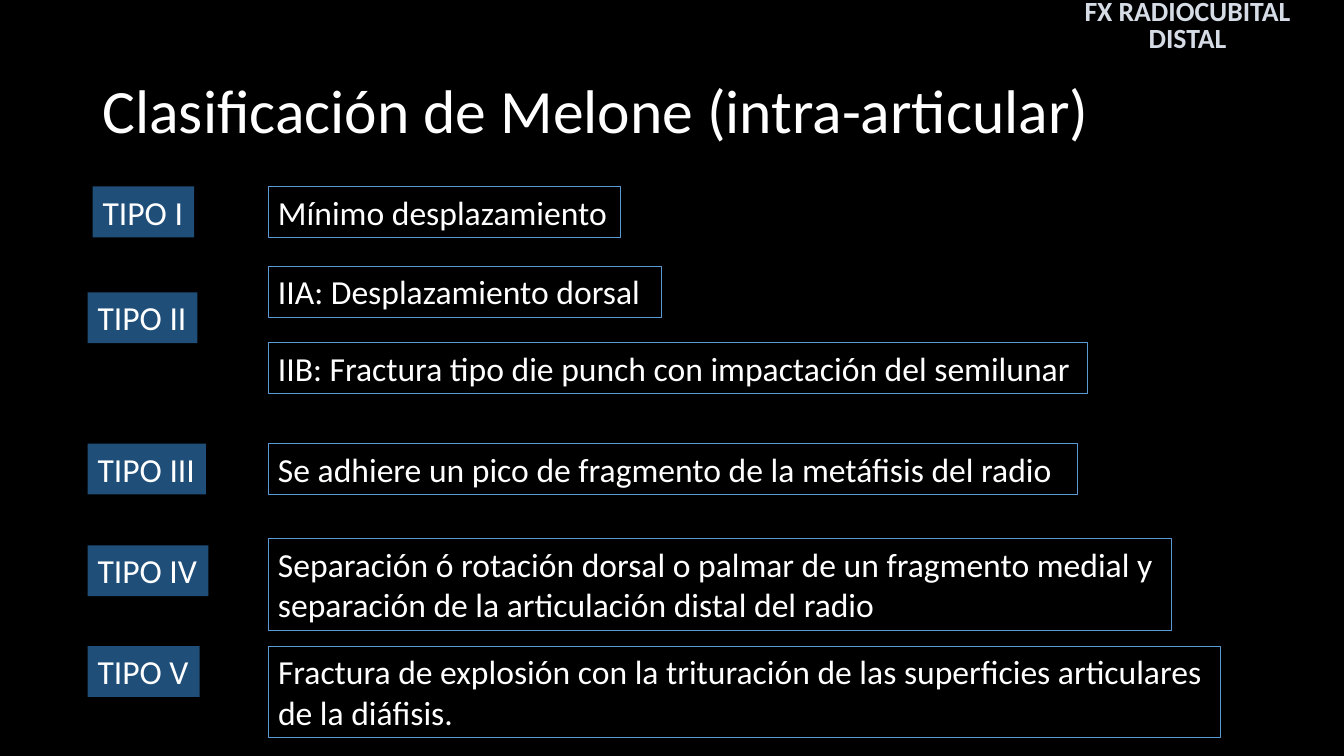
from lxml import etree
from pptx import Presentation
from pptx.dml.color import RGBColor
from pptx.enum import text
from pptx.oxml import ns
from pptx.util import Pt

COLORS = {
    "background": "000000",
    "text": "FFFFFF",
    "topic": "D6DCE5",
    "topic_outline": "3F6B94",
    "label": "1F4E79",
    "border": "5B9BD5",
}


class MeloneSlide:
    font = "Calibri"
    body_size = 24
    description_left = 191.5

    def __init__(self, presentation):
        self.slide = presentation.slides.add_slide(presentation.slide_layouts[6])
        fill = self.slide.background.fill
        fill.solid()
        fill.fore_color.rgb = self.color("background")

    def color(self, name):
        return RGBColor.from_string(COLORS[name])

    def text_box(self, words, left, top, width, height, size=body_size, color="text",
                 wrap=True, spacing=None, align=text.PP_ALIGN.LEFT,
                 anchor=text.MSO_ANCHOR.TOP):
        box = self.slide.shapes.add_textbox(Pt(left), Pt(top), Pt(width), Pt(height))
        frame = box.text_frame
        frame.text = words
        frame.word_wrap = wrap
        frame.vertical_anchor = anchor
        for paragraph in frame.paragraphs:
            paragraph.alignment = align
            paragraph.line_spacing = spacing
            for run in paragraph.runs:
                run.font.name = self.font
                run.font.size = Pt(size)
                run.font.color.rgb = self.color(color)
        return box

    def title(self, words):
        self.text_box(words, 66.2, 28.8, 828, 104.4, size=44, spacing=0.9,
                      anchor=text.MSO_ANCHOR.MIDDLE)

    def topic(self, words):
        box = self.text_box(words, 740.2, 1.4, 216, 36, size=19.8, color="topic",
                            spacing=0.8, align=text.PP_ALIGN.CENTER,
                            anchor=text.MSO_ANCHOR.MIDDLE)
        run = box.text_frame.paragraphs[0].runs[0]
        run.font.bold = True
        # Thin outline around the letters
        outline = etree.Element(ns.qn("a:ln"), w=str(int(Pt(0.5))))
        solid = etree.SubElement(outline, ns.qn("a:solidFill"))
        etree.SubElement(solid, ns.qn("a:srgbClr"), val=COLORS["topic_outline"])
        run._r.get_or_add_rPr().insert(0, outline)

    def label(self, words, left, top, width):
        box = self.text_box(words, left, top, width, 36.3, wrap=False)
        box.fill.solid()
        box.fill.fore_color.rgb = self.color("label")

    def description(self, words, top, width):
        height = 36.3 + 29.1 * words.count("\n")
        box = self.text_box(words, self.description_left, top, width, height)
        box.line.color.rgb = self.color("border")
        box.line.width = Pt(0.75)


def main():
    presentation = Presentation()
    presentation.slide_width, presentation.slide_height = Pt(960), Pt(540)
    melone = MeloneSlide(presentation)

    # Headings
    melone.title("Clasificación de Melone (intra-articular)")
    melone.topic("FX RADIOCUBITAL DISTAL")

    # Fracture types: name, left, top, width
    for fracture_type in [
        ("TIPO I", 66.2, 133.2, 72.5),
        ("TIPO II", 62.6, 208.8, 78.5),
        ("TIPO III", 62.6, 316.8, 84.5),
        ("TIPO IV", 62.6, 389.5, 86.3),
        ("TIPO V", 62.6, 461.5, 80),
    ]:
        melone.label(*fracture_type)

    # Descriptions: wording, top, width
    for description in [
        ("Mínimo desplazamiento", 133.2, 252),
        ("IIA: Desplazamiento dorsal", 190.2, 280.8),
        ("IIB: Fractura tipo die punch con impactación del semilunar", 244.8, 585.4),
        ("Se adhiere un pico de fragmento de la metáfisis del radio", 316.8, 578.2),
        ("Separación ó rotación dorsal o palmar de un fragmento medial y\n"
         "separación de la articulación distal del radio", 384.7, 645.1),
        ("Fractura de explosión con la trituración de las superficies articulares\n"
         "de la diáfisis.", 461.5, 680.4),
    ]:
        melone.description(*description)

    presentation.save("out.pptx")


if __name__ == "__main__":
    main()
